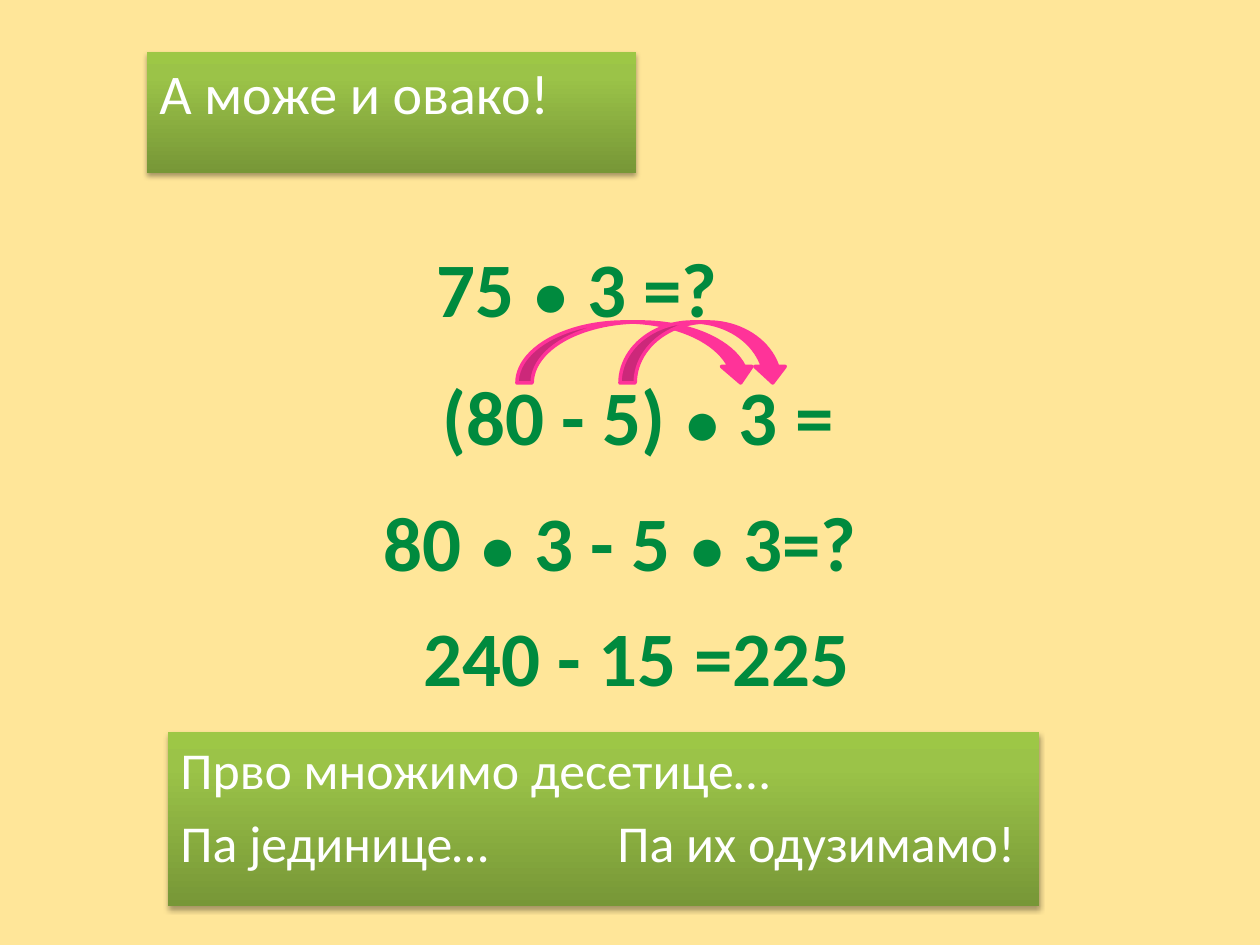
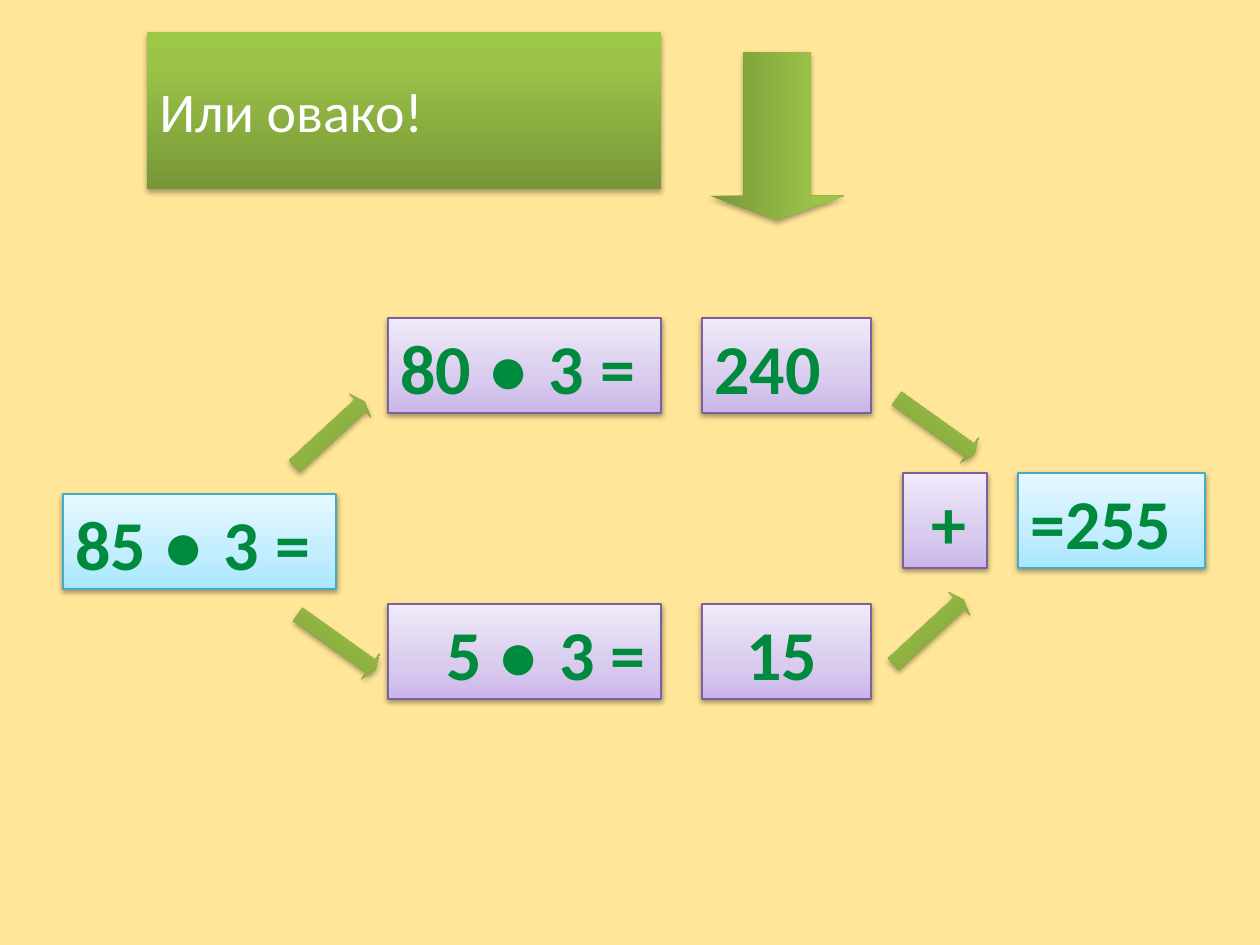
import pptx
import pptx.util
import pptx.dml.color
import pptx.enum.shapes
import pptx.enum.text
import pptx.oxml
import pptx.oxml.ns
from lxml import etree

SHAPE = pptx.enum.shapes.MSO_SHAPE
ANCHOR = pptx.enum.text.MSO_ANCHOR
ALIGN = pptx.enum.text.PP_ALIGN
EMU_PER_PX = 914400 / 126

# Shared look
BACKGROUND = "FFE699"
WHITE, INK, PINK = "FFFFFF", "008A3E", "FF3399"
GREEN = {"stops": [(0, "779737"), (80, "9BC348"), (100, "9DC746")],
         "line": None, "shadow": (35, 23000)}
BLUE = {"stops": [(0, "A7E6FF"), (35, "C1EDFF"), (100, "E7F8FF")],
        "line": "46AAC5", "shadow": (38, 20000)}
PURPLE = {"stops": [(0, "C9B5E8"), (35, "D8CBEE"), (100, "F0EAF9")],
          "line": "7D60A0", "shadow": (38, 20000)}

# First slide: places are left, top, width, height in px
HEADING = ("А може и овако!", (147, 52, 489, 121))
STEPS = [("75 ● 3 =?", 10, 208), ("(80 - 5) ● 3 =", 71, 336),
         ("80 ● 3 - 5 ● 3=?", 53, 462), ("240 - 15 =225", 70, 577)]
STEP_SIZE = (1134, 158)
NOTE = (["Прво множимо десетице…", "Па јединице…\tПа их одузимамо!"],
        (168, 732, 871, 174))
NOTE_TAB = 437
CURVES = [(517, 322, 239, 61), (620, 322, 168, 61)]

# Second slide: text, left, top, width, look, alignment, indent
SECOND_HEADING = ("Или овако!", (147, 32, 514, 157))
CARD_HEIGHT = 95
UPPER, MIDDLE, LOWER = 318, 473, 604
CARDS = [
    ("85 ● 3 =", 63, 494, 273, BLUE, ALIGN.LEFT, 0),
    ("80 ● 3 =", 388, UPPER, 273, PURPLE, ALIGN.LEFT, 0),
    ("5 ● 3 =", 388, LOWER, 273, PURPLE, ALIGN.LEFT, 46),
    ("240", 702, UPPER, 169, PURPLE, ALIGN.LEFT, 0),
    ("15", 702, LOWER, 169, PURPLE, ALIGN.LEFT, 32),
    ("+", 903, MIDDLE, 84, PURPLE, ALIGN.CENTER, 8),
    ("=255", 1018, MIDDLE, 187, BLUE, ALIGN.LEFT, 0),
]
UP, DOWN = 317.3, 35.5
ARROWS = [((693, 69, 168, 134), 90)] + [
    ((left, top, 95, 32), turn) for left, top, turn in
    [(282, 418, UP), (289, 626, DOWN), (888, 410, DOWN), (881, 616, UP)]]


def px(length):
    return pptx.util.Emu(round(length * EMU_PER_PX))


def color(value):
    return pptx.dml.color.RGBColor.from_string(value)


def add_child(parent, tag, **attributes):
    child = etree.SubElement(parent, pptx.oxml.ns.qn(tag))
    for name, value in attributes.items():
        child.set(name, str(value))
    return child


def set_all(target, values):
    for name, value in values.items():
        setattr(target, name, value)


def add_page(deck):
    page = deck.slides.add_slide(deck.slide_layouts[6])
    page.background.fill.solid()
    page.background.fill.fore_color.rgb = color(BACKGROUND)
    return page


def add_glossy(page, kind, place, look):
    """Preset shape with a vertical gradient and a soft shadow."""
    shape = page.shapes.add_shape(kind, *map(px, place))
    shape.fill.gradient()
    shape.fill.gradient_angle = 90
    properties = shape.element.spPr
    stops = properties.find(".//" + pptx.oxml.ns.qn("a:gsLst"))
    for stop in list(stops):
        stops.remove(stop)
    for position, value in look["stops"]:
        stop = add_child(stops, "a:gs", pos=position * 1000)
        add_child(stop, "a:srgbClr", val=value)
    if look["line"]:
        shape.line.color.rgb = color(look["line"])
        shape.line.width = pptx.util.Pt(0.75)
    else:
        shape.line.fill.background()
    shape.shadow.inherit = False
    opacity, distance = look["shadow"]
    effects = properties.find(pptx.oxml.ns.qn("a:effectLst"))
    shadow = add_child(effects, "a:outerShdw", blurRad=40000, dist=distance,
                       dir=5400000, rotWithShape=0)
    black = add_child(shadow, "a:srgbClr", val="000000")
    add_child(black, "a:alpha", val=opacity * 1000)
    return shape


def write(shape, lines, size, ink, bold=False, dot_size=None,
          align=ALIGN.LEFT, anchor=ANCHOR.TOP, indent=0, tab=None):
    frame = shape.text_frame
    set_all(frame, {"word_wrap": True, "vertical_anchor": anchor})
    for number, line in enumerate(lines):
        para = frame.add_paragraph() if number else frame.paragraphs[0]
        set_all(para, {"alignment": align,
                       "space_before": pptx.util.Pt(size * 0.2 if number else 0)})
        layout = para._p.get_or_add_pPr()
        if indent:
            layout.set("marL", str(px(indent)))
        if tab:
            add_child(add_child(layout, "a:tabLst"), "a:tab", pos=px(tab), algn="l")
        # Multiplication dots use their own font and size
        for part in filter(None, line.replace("● ", "|● |").split("|")):
            dot = part.startswith("●")
            span = para.add_run()
            span.text = part
            set_all(span.font, {
                "name": "Arial" if dot else "Calibri",
                "size": pptx.util.Pt(dot_size if dot and dot_size else size),
                "bold": bold})
            span.font.color.rgb = color(ink)


def build_steps(deck):
    page = add_page(deck)
    text, place = HEADING
    write(add_glossy(page, SHAPE.RECTANGLE, place, GREEN), [text], 32, WHITE)
    lines, place = NOTE
    write(add_glossy(page, SHAPE.RECTANGLE, place, GREEN), lines, 29.6, WHITE,
          tab=NOTE_TAB)
    # Curved arrows run from each term to the multiplier, behind the equations
    for place in CURVES:
        curve = page.shapes.add_shape(SHAPE.CURVED_DOWN_ARROW, *map(px, place))
        for index, value in enumerate((0.25, 0.5, 0.27)):
            curve.adjustments[index] = value
        curve.fill.solid()
        curve.fill.fore_color.rgb = curve.line.color.rgb = color(PINK)
        curve.line.width = pptx.util.Pt(2)
        curve.shadow.inherit = False
    for text, left, top in STEPS:
        box = page.shapes.add_textbox(*map(px, (left, top, *STEP_SIZE)))
        write(box, [text], 44, INK, bold=True, dot_size=36,
              align=ALIGN.CENTER, anchor=ANCHOR.MIDDLE)


def build_branches(deck):
    page = add_page(deck)
    text, place = SECOND_HEADING
    write(add_glossy(page, SHAPE.RECTANGLE, place, GREEN), [text], 32, WHITE,
          anchor=ANCHOR.MIDDLE)
    for text, left, top, width, look, align, indent in CARDS:
        card = add_glossy(page, SHAPE.RECTANGLE,
                          (left, top, width, CARD_HEIGHT), look)
        write(card, [text], 40, INK, bold=True, align=align, indent=indent)
    for place, turn in ARROWS:
        arrow = add_glossy(page, SHAPE.RIGHT_ARROW, place, GREEN)
        arrow.adjustments[1] = 0.18
        arrow.rotation = turn


def main():
    deck = pptx.Presentation()
    set_all(deck, {"slide_width": px(1260), "slide_height": px(945)})
    build_steps(deck)
    build_branches(deck)
    deck.save("out.pptx")


if __name__ == "__main__":
    main()
